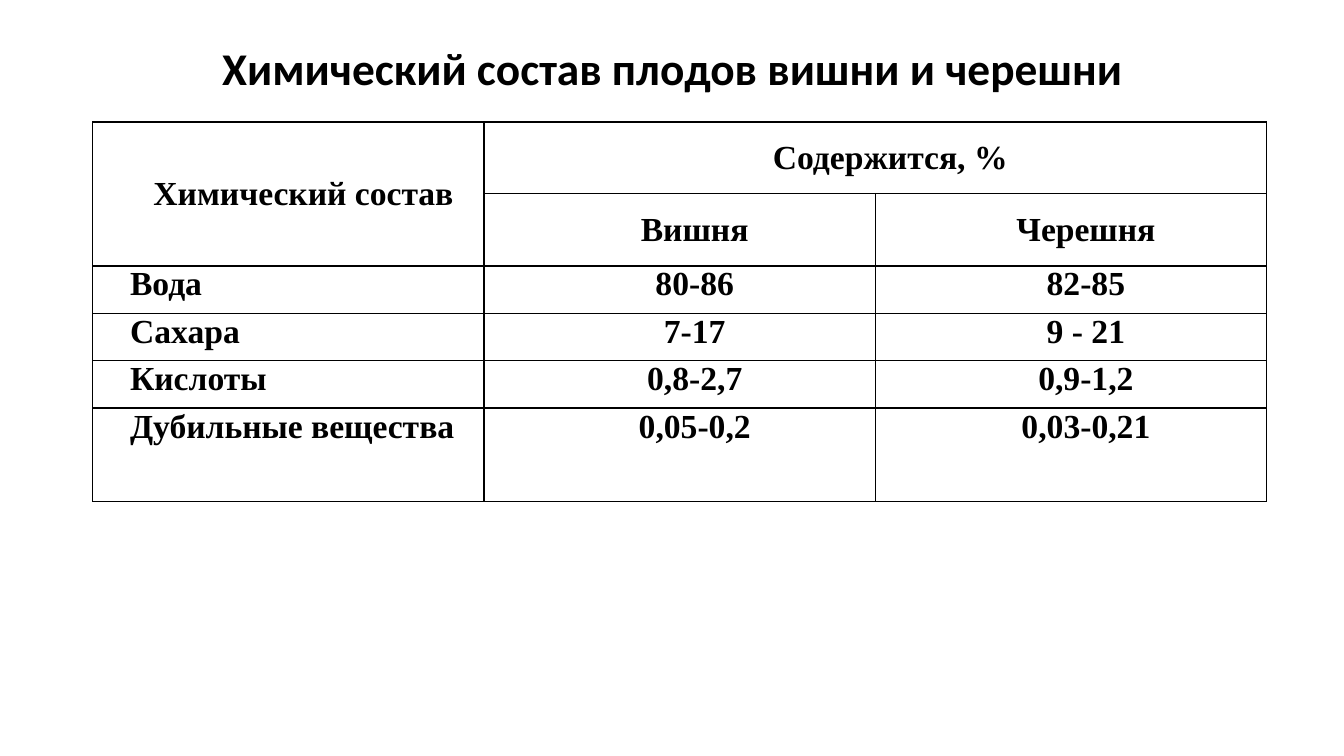
from lxml import etree
from pptx import Presentation
from pptx.dml.color import RGBColor
from pptx.enum.text import MSO_ANCHOR, PP_ALIGN
from pptx.oxml.ns import qn
from pptx.util import Inches, Pt

CENTER, LEFT = PP_ALIGN.CENTER, PP_ALIGN.LEFT
MIDDLE, TOP = MSO_ANCHOR.MIDDLE, MSO_ANCHOR.TOP

TITLE = "Химический состав плодов вишни и черешни"
ROWS = [
    ("Химический состав", "Содержится, %", None),
    (None, "Вишня", "Черешня"),
    ("Вода", "80-86", "82-85"),
    ("Сахара", "7-17", "9 - 21"),
    ("Кислоты", "0,8-2,7", "0,9-1,2"),
    ("Дубильные вещества", "0,05-0,2", "0,03-0,21"),
]
HEADER_ROWS = 2
MERGES = [((0, 0), (1, 0)), ((0, 1), (0, 2))]
ROW_HEIGHTS = [0.71, 0.72, 0.47, 0.47, 0.47, 0.93]
COLUMN_WIDTH = 3.88
MARGIN_LEFT = 0.92
BLACK = "000000"


def color(value):
    return RGBColor.from_string(value)


def format_paragraph(paragraph, font_name, size, alignment):
    paragraph.alignment = alignment
    for run in paragraph.runs:
        run.font.name = font_name
        run.font.size = Pt(size)
        run.font.bold = True
        run.font.color.rgb = color(BLACK)


def add_borders(cell):
    properties = cell._tc.get_or_add_tcPr()
    for position, side in enumerate(("lnL", "lnR", "lnT", "lnB")):
        line = etree.Element(qn(f"a:{side}"), w=str(Pt(1)))
        fill = etree.SubElement(line, qn("a:solidFill"))
        etree.SubElement(fill, qn("a:srgbClr"), val=BLACK)
        properties.insert(position, line)


def add_title(slide):
    box = slide.shapes.add_textbox(Inches(MARGIN_LEFT), Inches(0.4), Inches(11.5), Inches(0.78))
    frame = box.text_frame
    frame.word_wrap = True
    frame.vertical_anchor = MIDDLE
    frame.margin_top = 0
    frame.margin_bottom = Inches(0.18)
    frame.text = TITLE
    paragraph = frame.paragraphs[0]
    paragraph.line_spacing = 0.9
    format_paragraph(paragraph, "Calibri", 32.4, CENTER)


def fill_cell(cell, text, is_header, is_label):
    cell.fill.background()
    add_borders(cell)
    cell.margin_left = cell.margin_right = Inches(0.07)
    cell.margin_top = cell.margin_bottom = 0
    cell.vertical_anchor = MIDDLE if is_header else TOP
    if text is None:
        return
    cell.text_frame.text = text
    paragraph = cell.text_frame.paragraphs[0]
    alignment = LEFT if is_label and not is_header else CENTER
    format_paragraph(paragraph, "Times New Roman", 24, alignment)
    paragraph._p.get_or_add_pPr().set("indent", str(Inches(0.3)))


def add_composition_table(slide):
    columns = len(ROWS[0])
    table = slide.shapes.add_table(
        len(ROWS), columns, Inches(MARGIN_LEFT), Inches(1.21),
        Inches(COLUMN_WIDTH * columns), Inches(sum(ROW_HEIGHTS)),
    ).table
    table.first_row = table.horz_banding = False
    for column in table.columns:
        column.width = Inches(COLUMN_WIDTH)
    for row, height in zip(table.rows, ROW_HEIGHTS):
        row.height = Inches(height)
    for start, end in MERGES:
        table.cell(*start).merge(table.cell(*end))
    for row_index, texts in enumerate(ROWS):
        for column_index, text in enumerate(texts):
            cell = table.cell(row_index, column_index)
            fill_cell(cell, text, row_index < HEADER_ROWS, column_index == 0)


def main():
    presentation = Presentation()
    presentation.slide_width = Inches(13.33)
    presentation.slide_height = Inches(7.5)
    slide = presentation.slides.add_slide(presentation.slide_layouts[6])
    add_title(slide)
    add_composition_table(slide)
    presentation.save("out.pptx")


if __name__ == "__main__":
    main()
